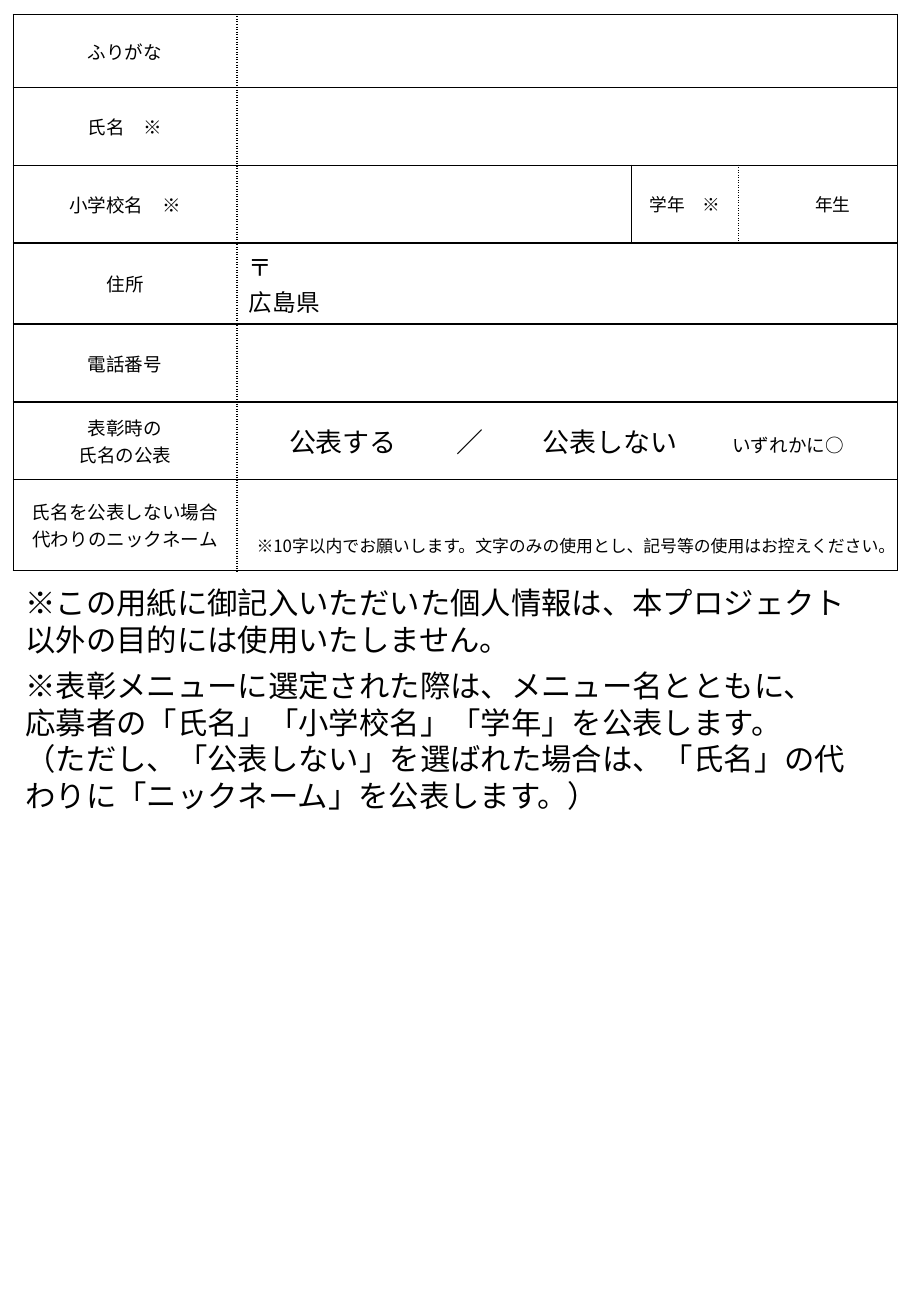
from pptx import Presentation
from pptx.dml.color import RGBColor
from pptx.enum.text import MSO_ANCHOR, PP_ALIGN
from pptx.oxml.ns import qn
from pptx.util import Inches, Pt
from lxml import etree

MID, LOW = MSO_ANCHOR.MIDDLE, MSO_ANCHOR.BOTTOM
LEFT, MIDDLE, RIGHT = PP_ALIGN.LEFT, PP_ALIGN.CENTER, PP_ALIGN.RIGHT
FONT, INK = "Noto Sans CJK JP", "000000"
WIDE, HIGH = 7.5, 10.83

LABELS = ["ふりがな", "氏名　※", "小学校名　※", "住所", "電話番号",
          "表彰時の\n氏名の公表", "氏名を公表しない場合\n代わりのニックネーム"]
SCHOOL = 2
ENTRIES = [
    (SCHOOL, 2, [[("学年　※", 10.5)]], MIDDLE, {}),
    (SCHOOL, 3, [[("年生", 10.5)]], RIGHT, {"margin_right": Inches(0.39)}),
    (3, 1, [[("〒", 14)], [("広島県", 14)]], LEFT, {}),
    (5, 1, [[("公表する\t／\t公表しない\t", 16), ("いずれかに○", 11)]], LEFT,
     {"margin_left": Inches(0.43)}),
    (6, 1, [[("※10字以内でお願いします。文字のみの使用とし、"
              "記号等の使用はお控えください。", 10)]], MIDDLE,
     {"vertical_anchor": LOW, "margin_bottom": Inches(0.11),
      "margin_left": Inches(0.14), "margin_right": Inches(0)}),
]
TABS = [1.38, 2.09, 3.65]
NOTES = [
    "※この用紙に御記入いただいた個人情報は、本プロジェクト以外の目的には使用いたしません。",
    "※表彰メニューに選定された際は、メニュー名とともに、\v"
    "応募者の「氏名」「小学校名」「学年」を公表します。\v"
    "（ただし、「公表しない」を選ばれた場合は、「氏名」の代わりに「ニックネーム」を公表します。）",
]
COLS = [1.84, 3.25, 0.88, 1.31]
ROWS = [0.6] + [0.64] * 5 + [0.75]


def color(code):
    return RGBColor.from_string(code)


def assign(item, values):
    for name, value in values.items():
        setattr(item, name, value)


def style(font, size):
    assign(font, {"size": Pt(size), "name": FONT, "bold": False})
    font.color.rgb = color(INK)


def write(frame, paras, form):
    for i, runs in enumerate(paras):
        para = frame.paragraphs[0] if i == 0 else frame.add_paragraph()
        assign(para, form)
        for text, size in runs:
            for j, line in enumerate(text.split("\v")):
                if j:
                    para.add_line_break()
                run = para.add_run()
                run.text = line
                style(run.font, size)
                face = etree.SubElement(run.font._element, qn("a:ea"))
                face.set("typeface", FONT)


def fill_in(cell, paras, align, form):
    assign(cell, {"vertical_anchor": MID, **form})
    write(cell.text_frame, paras, {"alignment": align})


def edge(cell, side, dash):
    line = etree.SubElement(cell._tc.get_or_add_tcPr(), qn("a:ln" + side), w="12700")
    paint = etree.SubElement(line, qn("a:solidFill"))
    etree.SubElement(paint, qn("a:srgbClr"), val=INK)
    etree.SubElement(line, qn("a:prstDash"), val=dash)


def border(cell, col, merged):
    dashes = {"L": "sysDot" if col in (1, 3) else "solid",
              "R": "sysDot" if col in (0, 2) else "solid",
              "T": "solid", "B": "solid"}
    for side, dash in dashes.items():
        inner = merged and (side == "L" and col > 1 or side == "R" and col == 2)
        if not inner:
            edge(cell, side, dash)
    cell.fill.background()


def add_form(slide):
    frame = slide.shapes.add_table(len(ROWS), len(COLS), Inches(0.11), Inches(0.12),
                                   Inches(sum(COLS)), Inches(sum(ROWS)))
    table = frame.table
    assign(table, {"first_row": False, "horz_banding": False})
    for col, size in zip(table.columns, COLS):
        col.width = Inches(size)
    for row, size in zip(table.rows, ROWS):
        row.height = Inches(size)
    for r, label in enumerate(LABELS):
        merged = r != SCHOOL
        if merged:
            table.cell(r, 1).merge(table.cell(r, 3))
        for c in range(len(COLS)):
            border(table.cell(r, c), c, merged)
        fill_in(table.cell(r, 0), [[(line, 11)] for line in label.split("\n")], MIDDLE, {})
    for r, c, paras, align, form in ENTRIES:
        fill_in(table.cell(r, c), paras, align, form)
    choice = table.cell(5, 1).text_frame.paragraphs[0]
    stops = etree.SubElement(choice._p.get_or_add_pPr(), qn("a:tabLst"))
    for stop in TABS:
        etree.SubElement(stops, qn("a:tab"), pos=str(Inches(stop)), algn="l")


def add_notes(slide):
    box = slide.shapes.add_textbox(Inches(0.11), Inches(4.76), Inches(6.98), Inches(2.39))
    box.text_frame.word_wrap = True
    write(box.text_frame, [[(note, 18)] for note in NOTES],
          {"space_before": Pt(6), "line_spacing": 1.0})


def main():
    deck = Presentation()
    assign(deck, {"slide_width": Inches(WIDE), "slide_height": Inches(HIGH)})
    slide = deck.slides.add_slide(deck.slide_layouts[6])
    add_form(slide)
    add_notes(slide)
    deck.save("out.pptx")


if __name__ == "__main__":
    main()
